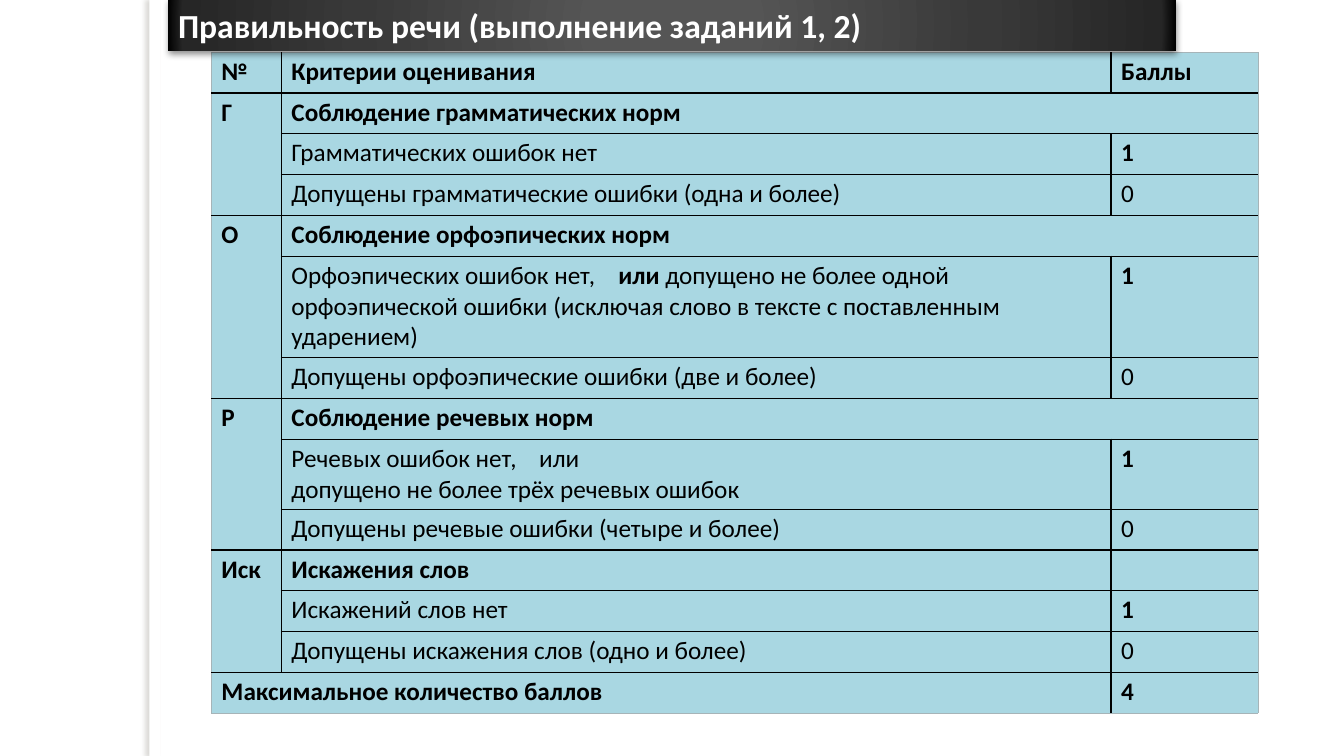
from lxml import etree
from pptx import Presentation
from pptx.dml.color import RGBColor
from pptx.enum.shapes import MSO_SHAPE
from pptx.enum.text import MSO_ANCHOR, MSO_AUTO_SIZE, PP_ALIGN
from pptx.oxml.ns import qn
from pptx.util import Pt

RECTANGLE = MSO_SHAPE.RECTANGLE
LEFT = PP_ALIGN.LEFT
MIDDLE = MSO_ANCHOR.MIDDLE
FIXED_SIZE = MSO_AUTO_SIZE.NONE

FONT = "Calibri"
CELL_FILL = "A9D7E2"
INNER_BORDER = ("000000", 1)
OUTER_BORDER = ("A6B4B8", 0.25)
COLUMN_WIDTHS = (50, 592.6, 105.1)
ROW_HEIGHT = 29.15
TALL_ROWS = {5: 72.4, 8: 50}
TAB_STOPS = {5: 233.5, 8: 177}
GROUP_STARTS = (1, 4, 7, 10)
TITLE_GRADIENT = ((0, "555555"), (15, "555555"), (62, "393939"),
                  (97, "262626"), (100, "000000"))

CRITERIA = (
    ("№", "Критерии оценивания", "Баллы"),
    ("Г", "Соблюдение грамматических норм", None),
    ("", "Грамматических ошибок нет", "1"),
    ("", "Допущены грамматические ошибки (одна и более)", "0"),
    ("О", "Соблюдение орфоэпических норм", None),
    ("", "Орфоэпических ошибок нет,\t*или *допущено не более одной "
         "орфоэпической ошибки (исключая слово в тексте с поставленным "
         "ударением)", "1"),
    ("", "Допущены орфоэпические ошибки (две и более)", "0"),
    ("Р", "Соблюдение речевых норм", None),
    ("", "Речевых ошибок нет,\tили\nдопущено не более трёх речевых ошибок", "1"),
    ("", "Допущены речевые ошибки (четыре и более)", "0"),
    ("Иск", "Искажения слов", ""),
    ("", "Искажений слов нет", "1"),
    ("", "Допущены искажения слов (одно и более)", "0"),
    ("Максимальное количество баллов", None, "4"),
)


def color(value):
    return RGBColor.from_string(value)


def apply(target, values):
    for name, value in values.items():
        setattr(target, name, value)


def add_child(parent, tag, **attributes):
    child = etree.SubElement(parent, qn(tag))
    for name, value in attributes.items():
        child.set(name, str(value))
    return child


def add_color(parent, value, alpha=100):
    element = add_child(parent, "a:srgbClr", val=value)
    if alpha < 100:
        add_child(element, "a:alpha", val=alpha * 1000)


def add_shadow(shape, value, alpha, blur, distance, degrees):
    effects = add_child(shape._element.spPr, "a:effectLst")
    shadow = add_child(effects, "a:outerShdw", blurRad=Pt(blur), dist=Pt(distance),
                       dir=degrees * 60000, algn="ctr", rotWithShape=0)
    add_color(shadow, value, alpha)


def add_radial_fill(shape, stops):
    gradient = etree.Element(qn("a:gradFill"), rotWithShape="1")
    stop_list = add_child(gradient, "a:gsLst")
    for position, value in stops:
        add_color(add_child(stop_list, "a:gs", pos=position * 1000), value)
    circle = add_child(gradient, "a:path", path="circle")
    add_child(circle, "a:fillToRect", l=50000, t=50000, r=50000, b=50000)
    shape._element.spPr.find(qn("a:ln")).addprevious(gradient)


def add_run(paragraph, text, size, bold, value):
    run = paragraph.add_run()
    run.text = text
    apply(run.font, {"name": FONT, "size": Pt(size), "bold": bold})
    run.font.color.rgb = color(value)


def add_side_edge(slide):
    edge = slide.shapes.add_shape(RECTANGLE, Pt(106.6), 0, Pt(7.9), Pt(540))
    edge.fill.solid()
    edge.fill.fore_color.rgb = color("FFFFFF")
    edge.line.fill.background()
    add_shadow(edge, "736F63", 25, 3, 3, 180)


def add_title(slide, text):
    title = slide.shapes.title
    apply(title, {"left": Pt(120), "top": Pt(0), "width": Pt(720), "height": Pt(36.35)})
    title.line.fill.background()
    add_radial_fill(title, TITLE_GRADIENT)
    add_shadow(title, "000000", 43, 5, 2, 90)
    apply(title.text_frame, {"word_wrap": True, "auto_size": FIXED_SIZE,
                             "vertical_anchor": MIDDLE})
    paragraph = title.text_frame.paragraphs[0]
    paragraph.alignment = LEFT
    add_run(paragraph, text, 24, True, "FFFFFF")
    slide.shapes._spTree.append(title._element)


def write_cell(cell, text, bold, tab_stop):
    for index, line in enumerate(text.split("\n")):
        frame = cell.text_frame
        paragraph = frame.add_paragraph() if index else frame.paragraphs[0]
        if "\t" in line:
            tabs = add_child(paragraph._p.get_or_add_pPr(), "a:tabLst")
            add_child(tabs, "a:tab", pos=Pt(tab_stop), algn="l")
        for part, piece in enumerate(line.split("*")):
            if piece:
                add_run(paragraph, piece, 18, bold or part % 2 == 1, "000000")
        if not line:
            paragraph.font.size = Pt(18)


def format_cell(cell, outer_sides):
    apply(cell, {"margin_left": Pt(7.2), "margin_right": Pt(7.2),
                 "margin_top": Pt(3), "margin_bottom": Pt(3)})
    properties = cell._tc.get_or_add_tcPr()
    for side in "LRTB":
        value, width = OUTER_BORDER if side in outer_sides else INNER_BORDER
        line = add_child(properties, "a:ln" + side, w=Pt(width))
        add_color(add_child(line, "a:solidFill"), value)
    cell.fill.solid()
    cell.fill.fore_color.rgb = color(CELL_FILL)


def add_criteria_table(slide):
    last_row, last_column = len(CRITERIA) - 1, len(COLUMN_WIDTHS) - 1
    heights = [TALL_ROWS.get(row, ROW_HEIGHT) for row in range(last_row + 1)]
    table = slide.shapes.add_table(
        last_row + 1, last_column + 1, Pt(151), Pt(37.3),
        Pt(sum(COLUMN_WIDTHS)), Pt(sum(heights))).table
    apply(table, {"first_row": False, "horz_banding": False})
    for column, width in zip(table.columns, COLUMN_WIDTHS):
        column.width = Pt(width)
    for row, height in zip(table.rows, heights):
        row.height = Pt(height)
    for start in GROUP_STARTS:
        table.cell(start, 0).merge(table.cell(start + 2, 0))
    for row, texts in enumerate(CRITERIA):
        if None in texts:
            column = texts.index(None)
            table.cell(row, column - 1).merge(table.cell(row, column))
        for column, text in enumerate(texts):
            cell = table.cell(row, column)
            at_edge = {"L": column == 0, "T": row == 0, "B": row == last_row,
                       "R": column + cell.span_width > last_column}
            format_cell(cell, [side for side, outer in at_edge.items() if outer])
            if text is not None and not cell.is_spanned:
                bold = text != "0" if column == last_column else bool(texts[0])
                write_cell(cell, text, bold, TAB_STOPS.get(row))


def main():
    presentation = Presentation()
    apply(presentation, {"slide_width": Pt(960), "slide_height": Pt(540)})
    slide = presentation.slides.add_slide(presentation.slide_layouts[5])
    add_side_edge(slide)
    add_criteria_table(slide)
    add_title(slide, "Правильность речи (выполнение заданий 1, 2)")
    presentation.save("out.pptx")


if __name__ == "__main__":
    main()
